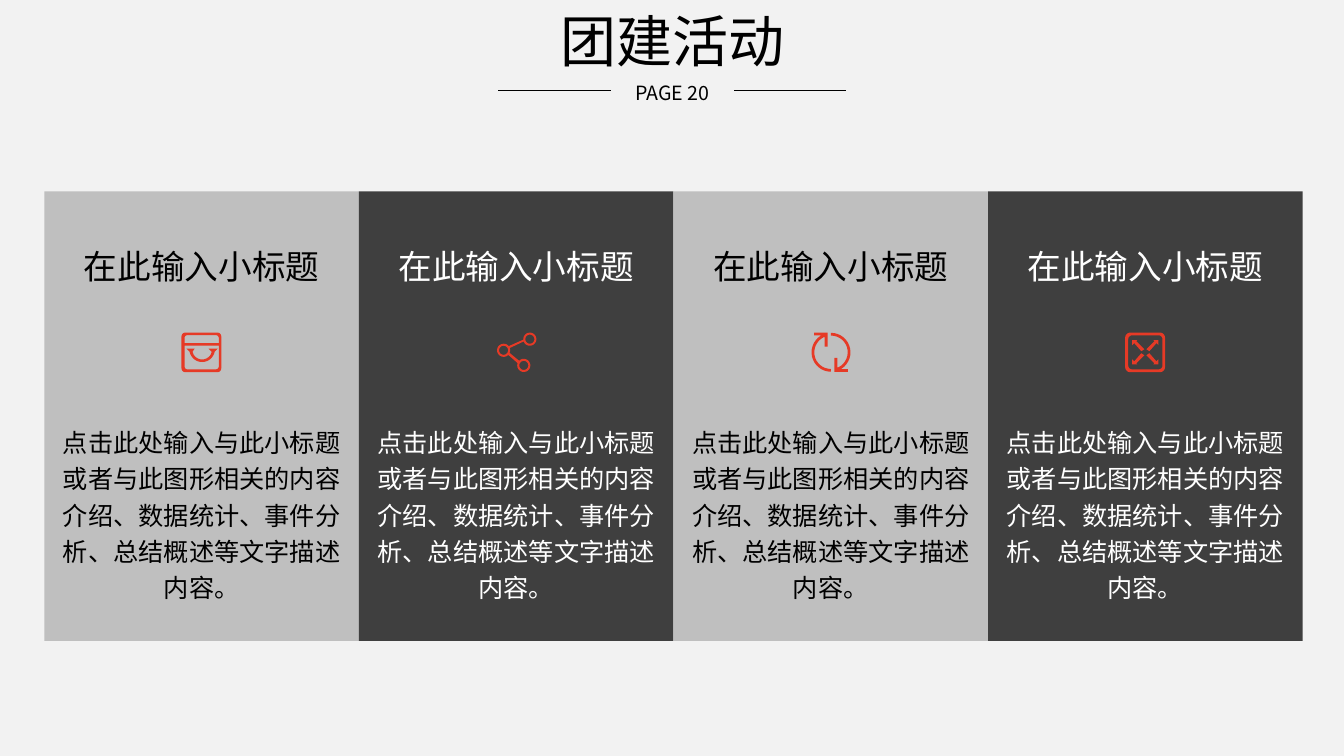
import math

from lxml import etree
from pptx import Presentation
from pptx import util as u
from pptx.dml.color import RGBColor
from pptx.enum import shapes, text
from pptx.oxml.ns import qn

COLORS = {"page": "F2F2F2", "light": "BFBFBF", "dark": "3F3F3F",
          "black": "000000", "white": "FFFFFF", "accent": "E63A26"}
TITLE_FONT, BODY_FONT = "Noto Sans CJK JP", "Noto Sans CJK SC"
HEADING = "在此输入小标题"
BODY = "点击此处输入与此小标题或者与此图形相关的内容介绍、数据统计、事件分析、总结概述等文字描述内容。"


class SlideBuilder:
    def __init__(self, page):
        self.page = page
        page.background.fill.solid()
        page.background.fill.fore_color.rgb = self.color("page")

    def color(self, name):
        return RGBColor.from_string(COLORS[name])

    def paint(self, shape, fill):
        shape.shadow.inherit = False
        shape.fill.solid()
        shape.fill.fore_color.rgb = self.color(fill)
        shape.line.fill.background()

    def panel(self, left, top, width, height, fill):
        size = map(u.Inches, (left, top, width, height))
        self.paint(self.page.shapes.add_shape(shapes.MSO_SHAPE.RECTANGLE, *size), fill)

    def label(self, left, top, width, height, words, size, color="black",
              font=BODY_FONT, side=0.1, spacing=1.0, wrap=True, middle=False):
        box = self.page.shapes.add_textbox(*map(u.Inches, (left, top, width, height)))
        frame = box.text_frame
        frame.word_wrap = wrap
        frame.margin_left = frame.margin_right = u.Inches(side)
        if middle:
            frame.vertical_anchor = text.MSO_ANCHOR.MIDDLE
        para = frame.paragraphs[0]
        para.text = words
        para.alignment = text.PP_ALIGN.CENTER
        para.line_spacing = spacing
        para.font.size = u.Pt(size)
        para.font.name = font
        para.font.color.rgb = self.color(color)
        # East Asian typeface follows the Latin one
        etree.SubElement(para.font._element, qn("a:ea")).set("typeface", font)

    def rule(self, left, right, top):
        line = self.page.shapes.add_connector(
            shapes.MSO_CONNECTOR.STRAIGHT, *map(u.Inches, (left, top, right, top)))
        line.line.color.rgb = self.color("black")
        line.line.width = u.Pt(0.5)
        etree.SubElement(line._element.spPr, qn("a:effectLst"))

    def icon(self, left, top, contours):
        """Draw contours given in hundredths of an inch as one outline."""
        scaled = [[(x * 10, y * 10) for x, y in points] for points in contours]
        pen = self.page.shapes.build_freeform(*scaled[0][0], scale=u.Inches(1) / 1000)
        pen.add_line_segments(scaled[0][1:])
        for points in scaled[1:]:
            pen.move_to(*points[0])
            pen.add_line_segments(points[1:])
        self.paint(pen.convert_to_shape(u.Inches(left), u.Inches(top)), "accent")


# Icon geometry
def arc(x, y, radius, start, end):
    steps = max(4, round(abs(end - start) / 10))
    angles = [math.radians(start + (end - start) * i / steps) for i in range(steps + 1)]
    return [(x + radius * math.cos(a), y + radius * math.sin(a)) for a in angles]


def rounded(left, top, right, bottom, upper, lower):
    return [*arc(left + upper, top + upper, upper, 180, 270),
            *arc(right - upper, top + upper, upper, 270, 360),
            *arc(right - lower, bottom - lower, lower, 0, 90),
            *arc(left + lower, bottom - lower, lower, 90, 180)]


def pouch_icon():
    smile = [(5, 16), (13, 16), *arc(20.5, 17, 9.7, 168, 12), (27, 16), (36, 16),
             *arc(20.5, 16.5, 12.7, 12, 168)]
    return [rounded(0, 0, 39.5, 39.3, 4, 4), rounded(3, 2.5, 37, 10.5, 3, 0),
            rounded(3, 13, 37, 36.5, 0, 3), smile]


def share_icon():
    hub, upper, lower = (6.5, 17.5), (32.5, 6.5), (26.5, 32.5)
    outline = [*arc(*upper, 6.5, 176, 519), *arc(*hub, 6.5, -21, 24),
               *arc(*lower, 6.5, 225, 561), *arc(*hub, 6.5, 45, 321)]
    return [outline] + [arc(*node, 4.5, 0, 360) for node in (hub, upper, lower)]


def refresh_icon():
    half = [*arc(19.25, 19.5, 19.3, -90, 57), (29, 36.3), (36, 36.3), (36, 39), (22.5, 39),
            (22.5, 25), (25.5, 25), (25.5, 34.5), *arc(19.25, 19.5, 16.6, 64, -90)]
    return [half, [(38.5 - x, 39 - y) for x, y in half]]


def expand_icon():
    arrow = [(24, 20), (31, 28), (33, 26), (33, 31), (28, 31), (29, 30), (21, 22)]
    arrows = [[(20 + across * (x - 20), 19.5 + down * (y - 19)) for x, y in arrow]
              for across in (1, -1) for down in (1, -1)]
    return [rounded(0, 0, 39.5, 39.3, 5, 5), rounded(3, 2.7, 37, 36.5, 4, 4), *arrows]


def main():
    deck = Presentation()
    deck.slide_width, deck.slide_height = u.Inches(13.33), u.Inches(7.5)
    slide = SlideBuilder(deck.slides.add_slide(deck.slide_layouts[6]))

    # Header
    slide.label(5.72, 0.75, 1.9, 0.34, "PAGE 20", 14)
    slide.rule(4.94, 6.06, 0.9)
    slide.rule(7.28, 8.39, 0.9)
    slide.label(4.54, -0.04, 4.26, 0.96, "团建活动", 40, font=TITLE_FONT,
                spacing=0.9, wrap=False, middle=True)

    # Four columns, alternating light and dark
    width = 3.12
    icons = [(1.8, pouch_icon()), (4.93, share_icon()),
             (8.05, refresh_icon()), (11.16, expand_icon())]
    for column, (icon_left, contours) in enumerate(icons):
        left = 0.44 + column * width
        fill, color = (("light", "black"), ("dark", "white"))[column % 2]
        slide.panel(left, 1.9, width, 4.46, fill)
        slide.label(left + 0.11, 2.39, 2.9, 0.5, HEADING, 24, color, side=0)
        slide.label(left + 0.11, 4.13, 2.9, 1.92, BODY, 18, color, side=0, spacing=1.2)
        slide.icon(icon_left, 3.3, contours)

    deck.save("out.pptx")


if __name__ == "__main__":
    main()
